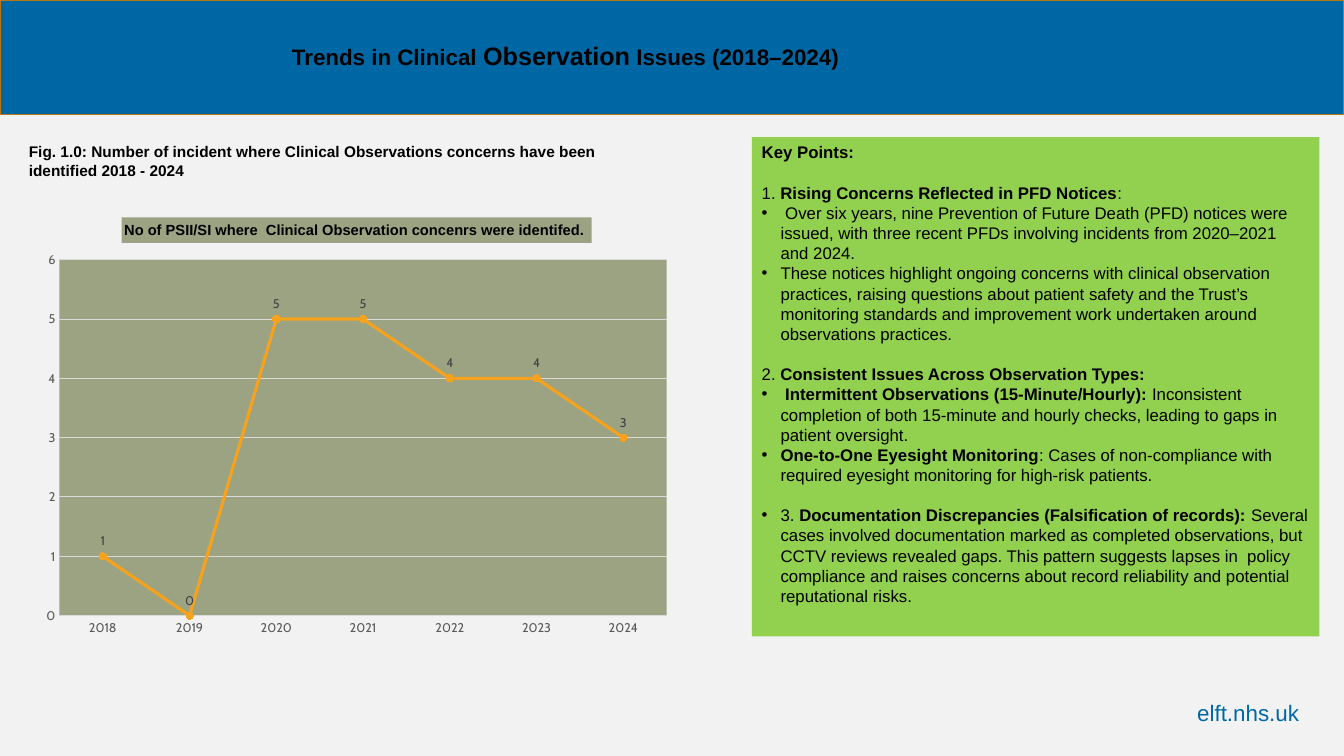
import pptx
import pptx.chart.data
import pptx.dml.color
import pptx.enum.chart
import pptx.enum.shapes
import pptx.enum.text
import pptx.oxml
import pptx.oxml.ns
import pptx.util

Pt = pptx.util.Pt
ALIGN = pptx.enum.text.PP_ALIGN
COLORS = {
    "background": "F2F2F2", "blue": "0067A5", "brown": "B67815",
    "green": "92D050", "olive": "9CA383", "orange": "F6A21D",
    "grid": "D9D9D9", "axis": "595959", "label": "404040", "black": "000000",
}


def rgb(name):
    return pptx.dml.color.RGBColor.from_string(COLORS[name])


def style_font(font, size, color="black", bold=False, name="Arial"):
    font.name, font.size, font.bold = name, Pt(size), bold
    font.color.rgb = rgb(color)


def add_span(para, text, **style):
    span = para.add_run()
    span.text = text
    style_font(span.font, **style)


def set_layout(parent, index, x, y, w=None, h=None):
    """Place a chart part by fractions of the chart's size."""
    for old in parent.findall(pptx.oxml.ns.qn("c:layout")):
        parent.remove(old)
    inner = '<c:layoutTarget val="inner"/>' if w else ""
    modes = '<c:xMode val="edge"/><c:yMode val="edge"/>'
    sizes = {"x": x, "y": y, "w": w, "h": h}
    values = "".join(f'<c:{key} val="{value}"/>' for key, value in sizes.items() if value)
    parent.insert(index, pptx.oxml.parse_xml(
        f'<c:layout {pptx.oxml.ns.nsdecls("c")}><c:manualLayout>'
        f"{inner}{modes}{values}</c:manualLayout></c:layout>"))


class Slide:
    def __init__(self, deck):
        self.page = deck.slides.add_slide(deck.slide_layouts[6])
        self.page.background.fill.solid()
        self.page.background.fill.fore_color.rgb = rgb("background")

    def add_panel(self, left, top, width, height, fill, line=None):
        box = self.page.shapes.add_shape(
            pptx.enum.shapes.MSO_SHAPE.RECTANGLE,
            Pt(left), Pt(top), Pt(width), Pt(height))
        box.shadow.inherit = False
        box.fill.solid()
        box.fill.fore_color.rgb = rgb(fill)
        if line:
            box.line.color.rgb = rgb(line)
            box.line.width = Pt(1)
        else:
            box.line.fill.background()
        return box

    def add_text(self, left, top, width, height, spans, align=ALIGN.LEFT, spacing=None):
        box = self.page.shapes.add_textbox(Pt(left), Pt(top), Pt(width), Pt(height))
        box.text_frame.word_wrap = True
        para = box.text_frame.paragraphs[0]
        para.alignment = align
        if spacing:
            para.line_spacing = Pt(spacing)
        for text, style in spans:
            add_span(para, text, **style)

    def add_points(self, box, points, size, spacing):
        frame = box.text_frame
        frame.word_wrap = True
        frame.vertical_anchor = pptx.enum.text.MSO_ANCHOR.TOP
        for index, (bullet, gap, spans) in enumerate(points):
            para = frame.add_paragraph() if index else frame.paragraphs[0]
            para.alignment = ALIGN.LEFT
            para.line_spacing = Pt(spacing)
            para.space_before = Pt(spacing if gap else 0)
            if bullet:
                props = para._p.get_or_add_pPr()
                props.set("marL", str(Pt(13.5)))
                props.set("indent", str(-Pt(13.5)))
                for tag in ('a:buFont {} typeface="Arial"', 'a:buChar {} char="•"'):
                    props.append(pptx.oxml.parse_xml(
                        "<" + tag.format(pptx.oxml.ns.nsdecls("a")) + "/>"))
            for text, bold in spans:
                add_span(para, text, size=size, bold=bold)

    def add_line_chart(self, left, top, width, height, title, years, counts):
        data = pptx.chart.data.CategoryChartData()
        data.categories = years
        data.add_series(title, counts)
        chart = self.page.shapes.add_chart(
            pptx.enum.chart.XL_CHART_TYPE.LINE_MARKERS,
            Pt(left), Pt(top), Pt(width), Pt(height), data).chart
        style_font(chart.font, 10, name="Cabin")
        chart.has_legend = False

        # Title on an olive band
        chart.has_title = True
        heading = chart.chart_title
        add_span(heading.text_frame.paragraphs[0], title, size=10.5, bold=True)
        heading.format.fill.solid()
        heading.format.fill.fore_color.rgb = rgb("olive")
        set_layout(heading._element, 1, 0.136, 0.034)

        # Plot area
        area = chart._chartSpace.xpath("c:chart/c:plotArea")[0]
        set_layout(area, 0, 0.04, 0.13, 0.94, 0.806)
        area.append(pptx.oxml.parse_xml(
            f'<c:spPr {pptx.oxml.ns.nsdecls("c", "a")}><a:solidFill>'
            f'<a:srgbClr val="{COLORS["olive"]}"/></a:solidFill></c:spPr>'))

        # Axes
        values = chart.value_axis
        values.minimum_scale, values.maximum_scale, values.major_unit = 0, 6, 1
        values.has_major_gridlines = True
        values.format.line.fill.background()
        for axis in (chart.category_axis, values):
            axis.major_tick_mark = pptx.enum.chart.XL_TICK_MARK.NONE
            axis.minor_tick_mark = pptx.enum.chart.XL_TICK_MARK.NONE
            style_font(axis.tick_labels.font, 9, "axis", name="Cabin")
        for line in (chart.category_axis.format.line, values.major_gridlines.format.line):
            line.color.rgb = rgb("grid")
            line.width = Pt(0.75)

        # Line, markers and value labels
        chart.plots[0].vary_by_categories = False
        series = chart.plots[0].series[0]
        series.smooth = False
        series.format.line.color.rgb = rgb("orange")
        series.format.line.width = Pt(2.25)
        marker = series.marker
        marker.style = pptx.enum.chart.XL_MARKER_STYLE.CIRCLE
        marker.size = 5
        marker.format.fill.solid()
        marker.format.fill.fore_color.rgb = rgb("orange")
        marker.format.line.color.rgb = rgb("orange")
        labels = series.data_labels
        labels.show_value = True
        labels.position = pptx.enum.chart.XL_LABEL_POSITION.ABOVE
        style_font(labels.font, 9, "label", name="Cabin")


# Each point: bulleted, gap above, spans of (text, bold)
KEY_POINTS = [
    (False, False, [("Key Points:", True)]),
    (False, True, [("1. ", False), ("Rising Concerns Reflected in PFD Notices", True),
                   (":", False)]),
    (True, False, [(" Over six years, nine Prevention of Future Death (PFD) notices were "
                    "issued, with three recent PFDs involving incidents from 2020–2021 "
                    "and 2024.", False)]),
    (True, False, [("These notices highlight ongoing concerns with clinical observation "
                    "practices, raising questions about patient safety and the Trust’s "
                    "monitoring standards and improvement work undertaken around "
                    "observations practices.", False)]),
    (False, True, [("2. ", False), ("Consistent Issues Across Observation Types:", True)]),
    (True, False, [(" Intermittent Observations (15-Minute/Hourly): ", True),
                   ("Inconsistent completion of both 15-minute and hourly checks, "
                    "leading to gaps in patient oversight.", False)]),
    (True, False, [("One-to-One Eyesight Monitoring", True),
                   (": Cases of non-compliance with required eyesight monitoring for "
                    "high-risk patients.", False)]),
    (True, True, [("3. ", False),
                  ("Documentation Discrepancies (Falsification of records): ", True),
                  ("Several cases involved documentation marked as completed "
                   "observations, but CCTV reviews revealed gaps. This pattern suggests "
                   "lapses in  policy compliance and raises concerns about record "
                   "reliability and potential reputational risks.", False)]),
]


def main():
    deck = pptx.Presentation()
    deck.slide_width, deck.slide_height = Pt(960), Pt(540)
    slide = Slide(deck)

    # Footer and header
    slide.add_text(804, 496, 131, 27, [("elft.nhs.uk", {"size": 16, "color": "blue"})],
                   align=ALIGN.RIGHT)
    slide.add_panel(0, 0, 960, 82, "blue", line="brown")
    slide.add_text(201.5, 25, 567.5, 50, [
        ("Trends in Clinical ", {"size": 16, "bold": True}),
        ("Observation", {"size": 18, "bold": True}),
        (" Issues (2018–2024)", {"size": 16, "bold": True})])

    # Chart and its caption
    slide.add_line_chart(
        24, 144.5, 461.5, 315.5,
        "No of PSII/SI where  Clinical Observation concenrs were identifed. ",
        [str(year) for year in range(2018, 2025)], [1, 0, 5, 5, 4, 4, 3])
    slide.add_text(13.5, 98, 471.5, 34, [
        ("Fig. 1.0: Number of incident where Clinical Observations concerns have been "
         "identified 2018 - 2024", {"size": 11, "bold": True})], spacing=13.2)

    # Key points
    panel = slide.add_panel(537, 98, 405.5, 356.5, "green")
    slide.add_points(panel, KEY_POINTS, size=12, spacing=14.4)

    deck.save("out.pptx")


if __name__ == "__main__":
    main()
